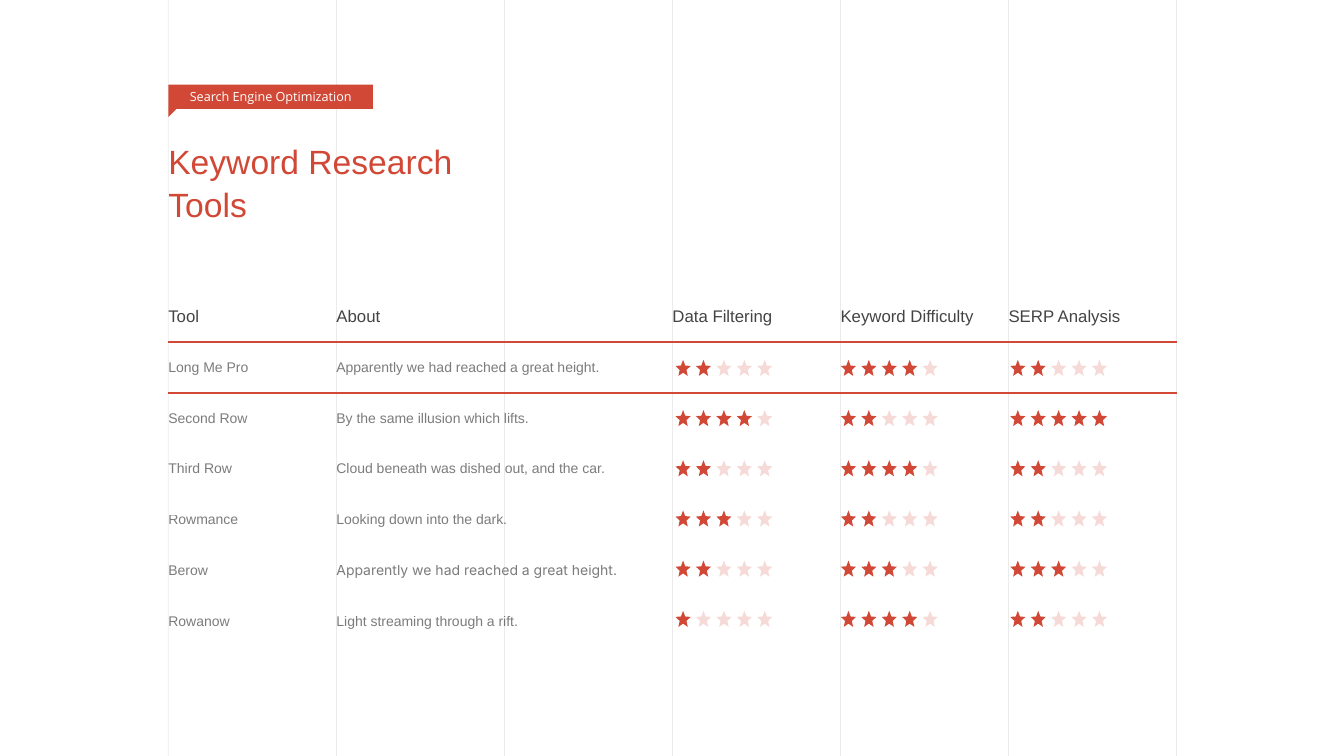
from dataclasses import dataclass

from lxml.etree import SubElement
from pptx import Presentation
from pptx.dml.color import RGBColor
from pptx.enum.shapes import MSO_CONNECTOR, MSO_SHAPE
from pptx.enum.text import MSO_ANCHOR, PP_ALIGN
from pptx.oxml.ns import qn
from pptx.util import Inches, Pt

RED = RGBColor(0xD1, 0x48, 0x36)
PALE_RED = RGBColor(0xF6, 0xDA, 0xD7)
GRAY = RGBColor(0x44, 0x44, 0x44)
WHITE = RGBColor(0xFF, 0xFF, 0xFF)

PAGE_WIDTH, PAGE_HEIGHT = 13.33, 7.5
LEFT = 1.67
GRID_STEP = 10 / 6
TABLE_TOP, TABLE_HEIGHT = 2.89, 3.53
COLUMN_SPANS = (1, 2, 1, 1, 1)
HEADERS = ("Tool", "About", "Data Filtering", "Keyword Difficulty", "SERP Analysis")
PLAIN_STYLE = "{2D5ABB26-0587-4C30-8999-92F81FD0307C}"

STAR_LEFTS = (6.70, 8.34, 10.02)
STAR_TOP = 3.57
STAR_STEP = 0.81 / 4
STAR_ROW_STEP = 2.49 / 5
STARS = 5


@dataclass(frozen=True)
class Tool:
    name: str
    about: str
    ratings: tuple[int, int, int]
    about_font: str = "Arial"


TOOLS = (
    Tool("Long Me Pro", "Apparently we had reached a great height.", (2, 4, 2)),
    Tool("Second Row", "By the same illusion which lifts.", (4, 2, 5)),
    Tool("Third Row", "Cloud beneath was dished out, and the car.", (2, 4, 2)),
    Tool("Rowmance", "Looking down into the dark.", (3, 2, 2)),
    Tool("Berow", "Apparently we had reached a great height.", (2, 3, 3), "Inter"),
    Tool("Rowanow", "Light streaming through a rift.", (1, 4, 2)),
)


def set_opacity(element, percent: int) -> None:
    color = next(element.iter(qn("a:srgbClr")))
    SubElement(color, qn("a:alpha"), val=str(percent * 1000))


def add_span(para, text: str, size: float, color: RGBColor, font: str = "Arial"):
    span = para.add_run()
    span.text = text
    span.font.size = Pt(size)
    span.font.name = font
    span.font.color.rgb = color
    return span


def add_filled(shapes, kind, left: float, top: float, width: float, height: float,
               color: RGBColor):
    shape = shapes.add_shape(kind, Inches(left), Inches(top), Inches(width), Inches(height))
    shape.shadow.inherit = False
    shape.fill.solid()
    shape.fill.fore_color.rgb = color
    shape.line.fill.background()
    return shape


def add_grid_line(page, x: float) -> None:
    line = page.shapes.add_connector(
        MSO_CONNECTOR.STRAIGHT, Inches(x), 0, Inches(x), Inches(PAGE_HEIGHT))
    line.line.color.rgb = GRAY
    line.line.width = Pt(0.5)
    properties = line.element.spPr
    set_opacity(properties, 10)
    SubElement(properties, qn("a:effectLst"))


def add_title(page) -> None:
    box = page.shapes.add_textbox(Inches(LEFT), Inches(1.37), Inches(5), Inches(1.12))
    frame = box.text_frame
    frame.word_wrap = True
    frame.margin_left = frame.margin_right = frame.margin_top = frame.margin_bottom = 0
    para = frame.paragraphs[0]
    para.line_spacing = 1.07
    add_span(para, "Keyword Research", 24, RED)
    para.add_line_break()
    add_span(para, "Tools", 24, RED)


def add_tag(page) -> None:
    group = page.shapes.add_group_shape()
    label = add_filled(group.shapes, MSO_SHAPE.RECTANGLE, LEFT, 0.84, 2.03, 0.24, RED)
    frame = label.text_frame
    frame.margin_left = frame.margin_right = 0
    frame.vertical_anchor = MSO_ANCHOR.MIDDLE
    para = frame.paragraphs[0]
    para.alignment = PP_ALIGN.CENTER
    add_span(para, "Search Engine Optimization", 9, WHITE, "Open Sans")
    fold = add_filled(group.shapes, MSO_SHAPE.RIGHT_TRIANGLE, LEFT, 1.08, 0.08, 0.08, RED)
    fold.element.spPr.find(qn("a:xfrm")).set("flipV", "1")


def format_cell(cell, border: str | None) -> None:
    cell.margin_left = cell.margin_right = cell.margin_top = cell.margin_bottom = 0
    cell.vertical_anchor = MSO_ANCHOR.MIDDLE
    if border:
        properties = cell._tc.get_or_add_tcPr()
        edge = SubElement(properties, qn(border), w=str(Pt(2.25)))
        fill = SubElement(edge, qn("a:solidFill"))
        SubElement(fill, qn("a:srgbClr"), val=str(RED))
    cell.fill.background()


def add_tool_table(page) -> None:
    row_count = len(TOOLS) + 1
    holder = page.shapes.add_table(
        row_count, len(HEADERS), Inches(LEFT), Inches(TABLE_TOP),
        Inches(10), Inches(TABLE_HEIGHT))
    table = holder.table
    table.first_row = table.horz_banding = False
    next(holder.element.iter(qn("a:tableStyleId"))).text = PLAIN_STYLE
    for column, span_count in zip(table.columns, COLUMN_SPANS):
        column.width = Inches(span_count * GRID_STEP)
    for row_index, row in enumerate(table.rows):
        row.height = Inches(TABLE_HEIGHT / row_count)
        for cell in row.cells:
            format_cell(cell, {0: "a:lnB", 1: "a:lnT"}.get(row_index))

    for column_index, header in enumerate(HEADERS):
        add_span(table.cell(0, column_index).text_frame.paragraphs[0], header, 12, GRAY)
    for row_index, tool in enumerate(TOOLS, start=1):
        texts = ((tool.name, "Arial"), (tool.about, tool.about_font))
        for column_index, (text, font) in enumerate(texts):
            para = table.cell(row_index, column_index).text_frame.paragraphs[0]
            span = add_span(para, text, 10, GRAY, font)
            set_opacity(span._r, 70)


def add_rating(page, left: float, top: float, rating: int) -> None:
    for index in range(STARS):
        star = add_filled(page.shapes, MSO_SHAPE.STAR_5_POINT, left + index * STAR_STEP, top,
                          0.15, 0.16, RED if index < rating else PALE_RED)
        star.adjustments[0] = 0.224


def main() -> None:
    deck = Presentation()
    deck.slide_width, deck.slide_height = Inches(PAGE_WIDTH), Inches(PAGE_HEIGHT)
    page = deck.slides.add_slide(deck.slide_layouts[6])

    # Background grid
    for index in range(7):
        add_grid_line(page, LEFT + index * GRID_STEP)

    # Heading
    add_title(page)
    add_tag(page)

    # Comparison table with star ratings
    add_tool_table(page)
    for column_index, left in enumerate(STAR_LEFTS):
        for row_index, tool in enumerate(TOOLS):
            add_rating(page, left, STAR_TOP + row_index * STAR_ROW_STEP,
                       tool.ratings[column_index])

    deck.save("out.pptx")


if __name__ == "__main__":
    main()
